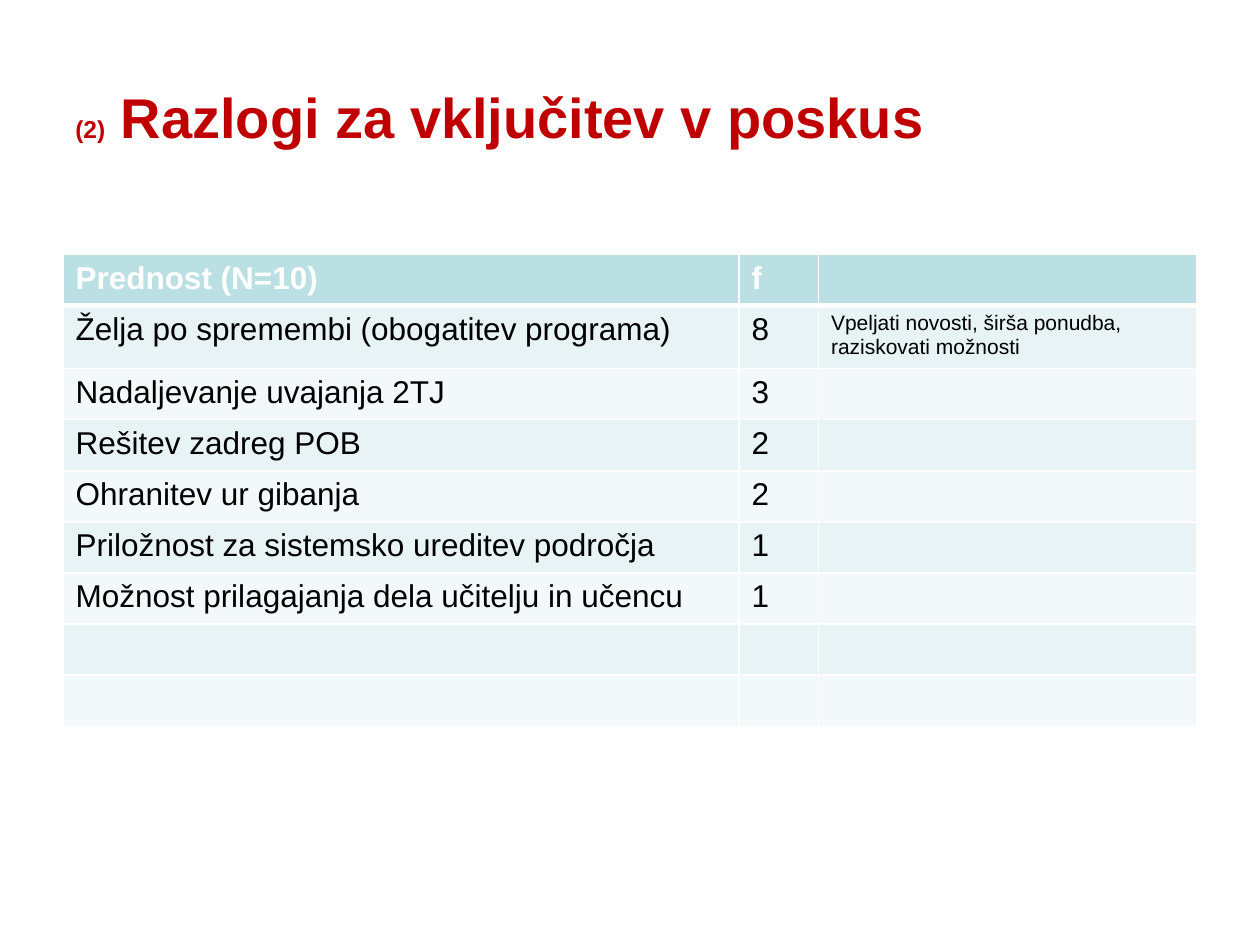
from lxml.etree import SubElement
from pptx import Presentation
from pptx.dml.color import RGBColor
from pptx.enum.text import MSO_ANCHOR
from pptx.oxml.ns import qn
from pptx.util import Cm, Pt

RED = RGBColor(0xC0, 0x00, 0x00)
WHITE = RGBColor(0xFF, 0xFF, 0xFF)
BLACK = RGBColor(0x00, 0x00, 0x00)
HEADER = RGBColor(0xBB, 0xE0, 0xE3)
BANDS = [RGBColor(0xF3, 0xF9, 0xFA), RGBColor(0xE7, 0xF3, 0xF4)]

ROWS = [
    ("Prednost (N=10)", "f", ""),
    ("Želja po spremembi (obogatitev programa)", "8",
     "Vpeljati novosti, širša ponudba, raziskovati možnosti"),
    ("Nadaljevanje uvajanja 2TJ", "3", ""),
    ("Rešitev zadreg POB", "2", ""),
    ("Ohranitev ur gibanja", "2", ""),
    ("Priložnost za sistemsko ureditev področja", "1", ""),
    ("Možnost prilagajanja dela učitelju in učencu", "1", ""),
    ("", "", ""),
    ("", "", ""),
]
COLUMN_WIDTHS = [Cm(13.63), Cm(1.6), Cm(7.63)]
ROW_HEIGHT = Cm(1.03)


def add_border(cell, side, points):
    line = SubElement(cell._tc.get_or_add_tcPr(), qn(f"a:ln{side}"), w=str(Pt(points)))
    fill = SubElement(line, qn("a:solidFill"))
    SubElement(fill, qn("a:srgbClr"), val=str(WHITE))


deck = Presentation()
deck.slide_width, deck.slide_height = Cm(25.4), Cm(19.05)
page = deck.slides.add_slide(deck.slide_layouts[6])

title = page.shapes.add_textbox(Cm(1.27), Cm(0.76), Cm(22.86), Cm(3.18)).text_frame
title.word_wrap = True
title.vertical_anchor = MSO_ANCHOR.MIDDLE
para = title.paragraphs[0]
para.font.name = "Arial"
para.font.bold = True
para.font.color.rgb = RED
for text, size in [("(2)", 14), (" Razlogi za vključitev v poskus", 32)]:
    span = para.add_run()
    span.text = text
    span.font.size = Pt(size)

table = page.shapes.add_table(
    len(ROWS), len(COLUMN_WIDTHS), Cm(1.27), Cm(5.13),
    sum(COLUMN_WIDTHS), ROW_HEIGHT * len(ROWS)).table
for column, width in zip(table.columns, COLUMN_WIDTHS):
    column.width = width

for row_number, texts in enumerate(ROWS):
    table.rows[row_number].height = ROW_HEIGHT
    is_header = row_number == 0
    for column_number, text in enumerate(texts):
        cell = table.cell(row_number, column_number)
        for side in "LRTB":
            thick = (is_header and side == "B") or (row_number == 1 and side == "T")
            add_border(cell, side, 3 if thick else 1)
        cell.fill.solid()
        cell.fill.fore_color.rgb = HEADER if is_header else BANDS[row_number % 2]
        cell.text = text
        font = cell.text_frame.paragraphs[0].font
        font.name = "Arial"
        font.size = Pt(12 if text and column_number == 2 else 18)
        font.bold = is_header
        font.color.rgb = WHITE if is_header else BLACK

deck.save("out.pptx")
